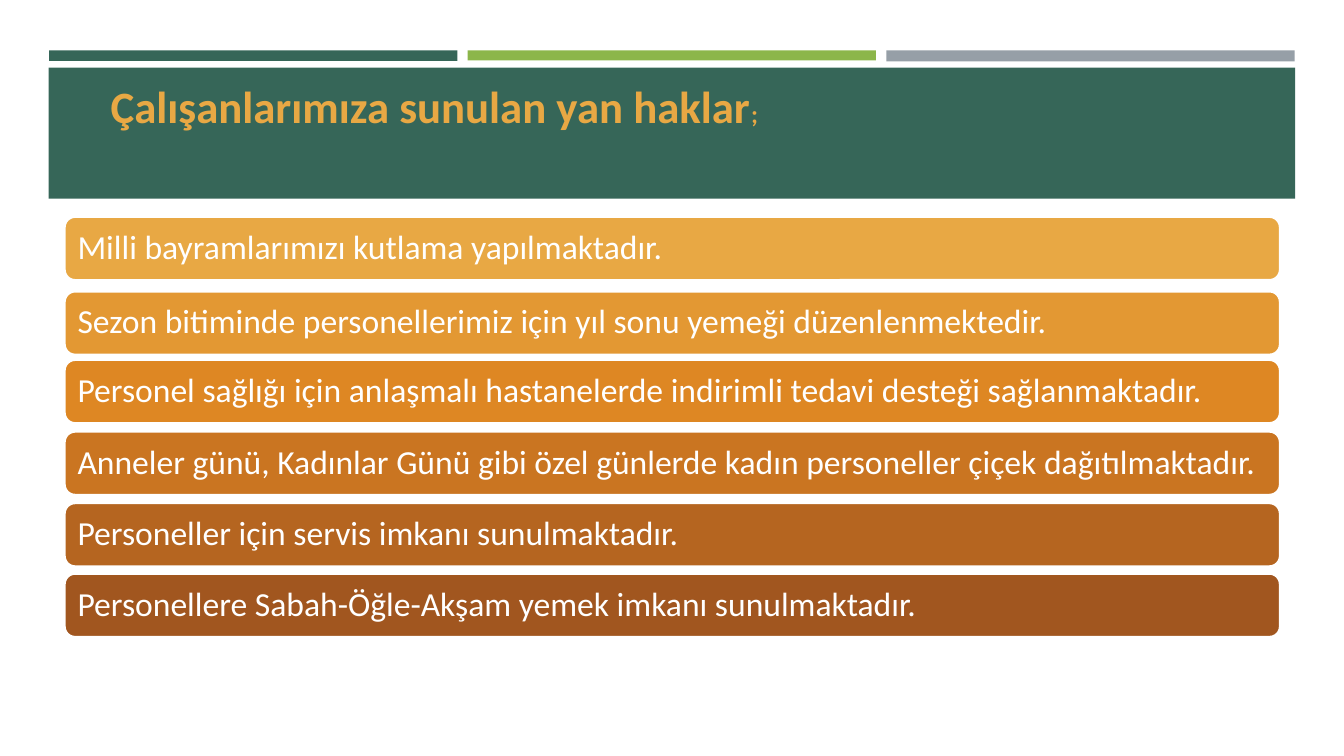
"""Builds the slide listing the side benefits offered to employees."""
from pptx import Presentation
from pptx.dml.color import RGBColor
from pptx.enum.shapes import MSO_SHAPE
from pptx.enum.text import MSO_ANCHOR, MSO_AUTO_SIZE, PP_ALIGN
from pptx.util import Pt

RECTANGLE = MSO_SHAPE.RECTANGLE
ROUNDED = MSO_SHAPE.ROUNDED_RECTANGLE
MIDDLE = MSO_ANCHOR.MIDDLE
LEFT = PP_ALIGN.LEFT
GROW = MSO_AUTO_SIZE.SHAPE_TO_FIT_TEXT

GREEN, LIME, GREY = "366658", "8CB64A", "969FA7"
GOLD, WHITE = "E8A844", "FFFFFF"

BENEFITS = [
    (154.8, GOLD, "Milli bayramlarımızı kutlama yapılmaktadır."),
    (208.1, "E39833", "Sezon bitiminde personellerimiz için yıl sonu yemeği düzenlenmektedir."),
    (257, "DE8723", "Personel sağlığı için anlaşmalı hastanelerde indirimli tedavi desteği sağlanmaktadır."),
    (308.2, "CA7521", "Anneler günü, Kadınlar Günü gibi özel günlerde kadın personeller çiçek dağıtılmaktadır."),
    (359.3, "B56520", "Personeller için servis imkanı sunulmaktadır."),
    (409.7, "A1561F", "Personellere Sabah-Öğle-Akşam yemek imkanı sunulmaktadır."),
]


def color(code):
    return RGBColor.from_string(code)


class Page:
    font = "Calibri"

    def __init__(self, deck):
        self.shapes = deck.slides.add_slide(deck.slide_layouts[6]).shapes

    def style(self, span, size, code, bold=False):
        span.font.name = self.font
        span.font.size = Pt(size)
        span.font.bold = bold
        span.font.color.rgb = color(code)

    def block(self, left, top, width, height, fill, kind=RECTANGLE):
        box = self.shapes.add_shape(kind, Pt(left), Pt(top), Pt(width), Pt(height))
        box.shadow.inherit = False
        box.fill.solid()
        box.fill.fore_color.rgb = color(fill)
        box.line.fill.background()
        return box

    def benefit(self, top, fill, text):
        box = self.block(46.1, top, 868.3, 45.4, fill, ROUNDED)
        box.line.color.rgb = color(WHITE)
        box.line.width = Pt(1.75)
        frame = box.text_frame
        frame.margin_left = frame.margin_right = Pt(7.2)
        frame.vertical_anchor = MIDDLE
        frame.word_wrap = True
        frame.text = text
        para = frame.paragraphs[0]
        para.alignment = LEFT
        para.line_spacing = 0.9
        self.style(para.runs[0], 24, WHITE)

    def title(self, left, top, width, height, spans):
        box = self.shapes.add_textbox(Pt(left), Pt(top), Pt(width), Pt(height))
        frame = box.text_frame
        frame.word_wrap = True
        frame.auto_size = GROW
        for text, size in spans:
            span = frame.paragraphs[0].add_run()
            span.text = text
            self.style(span, size, GOLD, bold=True)


def main():
    deck = Presentation()
    deck.slide_width, deck.slide_height = Pt(960), Pt(540)
    page = Page(deck)
    for column, (fill, height) in enumerate([(GREEN, 7.5), (LIME, 7.2), (GREY, 7.9)]):
        page.block(35.1 + column * 299, 36, 291.6, height, fill)
    page.block(34.8, 48.4, 890.4, 93.6, GREEN)
    page.title(72, 52.6, 563.8, 46, [("Çalışanlarımıza sunulan yan haklar", 32), (";", 18)])
    for top, fill, text in BENEFITS:
        page.benefit(top, fill, text)
    deck.save("out.pptx")


if __name__ == "__main__":
    main()
